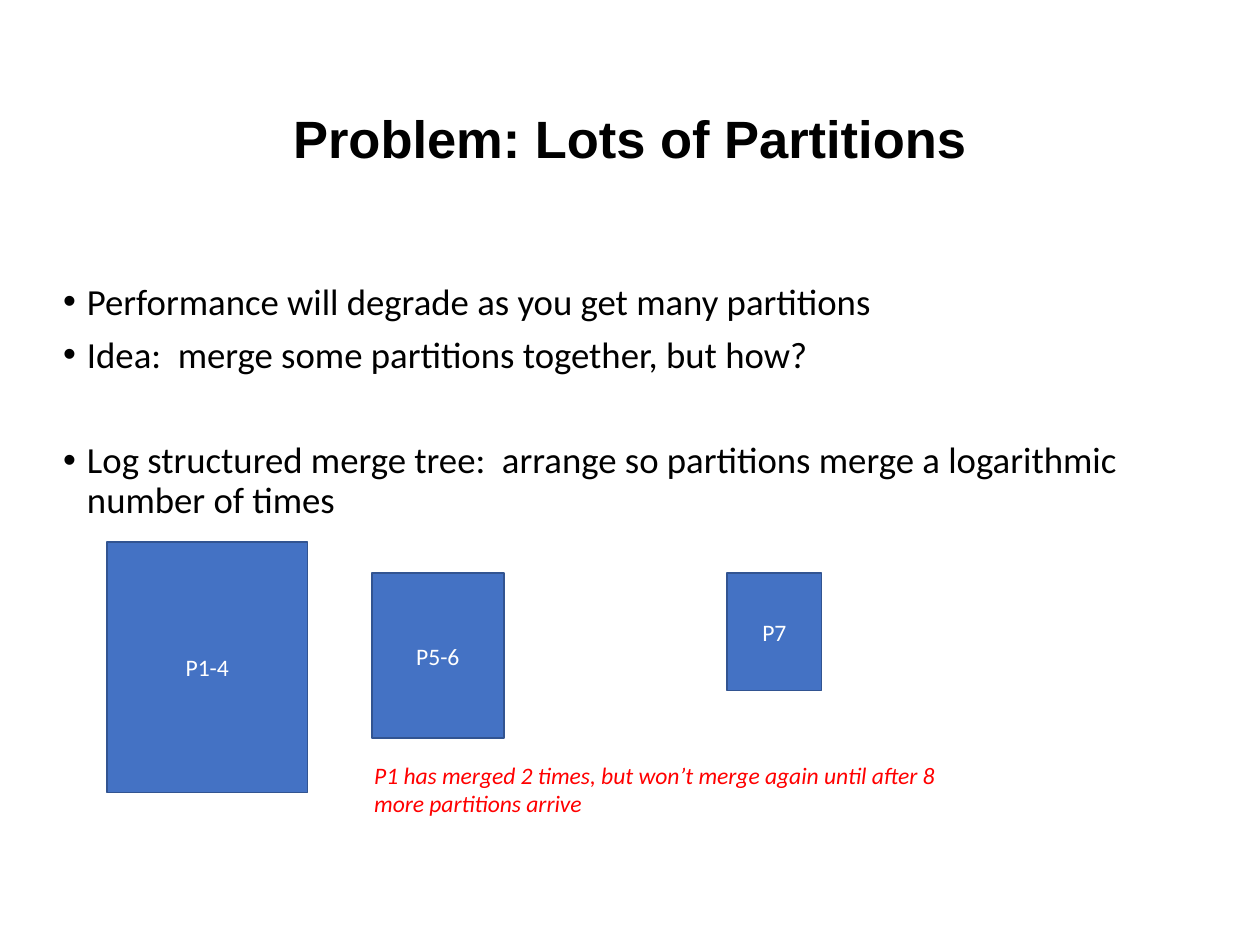
from lxml import etree
from pptx import Presentation
from pptx import util as u
from pptx.dml.color import RGBColor
from pptx.enum import shapes, text
from pptx.oxml.ns import qn

TITLE = dict(size=u.Pt(30), name="Arial", bold=True)
BODY = dict(size=u.Pt(21), name="Calibri")
LABEL = dict(size=u.Pt(13.5), name="Calibri")
NOTE = dict(LABEL, italic=True)
FRAME = dict(
    word_wrap=True,
    margin_left=u.Inches(0.08),
    margin_right=u.Inches(0.08),
    margin_top=u.Inches(0.04),
    margin_bottom=u.Inches(0.04),
)
LINE, GAP = 22.8, 7.5
POINTS = [
    ("Performance will degrade as you get many partitions", 0),
    ("Idea:  merge some partitions together, but how?", GAP),
    ("Log structured merge tree:  arrange so partitions merge "
     "a logarithmic number of times", LINE + 2 * GAP),
]
PARTS = [
    ("P1-4", (0.85, 4.3, 1.59, 1.99)),
    ("P5-6", (2.95, 4.55, 1.05, 1.31)),
    ("P7", (5.77, 4.55, 0.75, 0.93)),
]


def paint(part, color):
    """Give a font, fill or line a solid hex colour."""
    if hasattr(part, "solid"):
        part.solid()
        part = part.fore_color
    elif hasattr(part, "color"):
        part = part.color
    part.rgb = RGBColor.from_string(color)


def style(item, values):
    """Set each attribute in a dict of format values."""
    for key, value in values.items():
        setattr(item, key, value)


def write(para, words, font, color, **form):
    """Put one formatted run in a paragraph."""
    style(para, form)
    run = para.add_run()
    run.text = words
    style(run.font, font)
    paint(run.font, color)


def frame(slide, box, **form):
    """Add a text box and return its text frame."""
    area = slide.shapes.add_textbox(*map(u.Inches, box)).text_frame
    style(area, dict(FRAME, **form))
    return area


def title(slide, box):
    """Place the slide title."""
    area = frame(slide, box, vertical_anchor=text.MSO_ANCHOR.MIDDLE)
    write(area.paragraphs[0], "Problem: Lots of Partitions", TITLE, "000000",
          alignment=text.PP_ALIGN.CENTER, line_spacing=0.9)


def bullet(para):
    """Give a paragraph a hanging bullet."""
    props = para._p.get_or_add_pPr()
    props.set("marL", str(u.Inches(0.19)))
    props.set("indent", str(-u.Inches(0.19)))
    etree.SubElement(props, qn("a:buFont")).set("typeface", "Arial")
    etree.SubElement(props, qn("a:buChar")).set("char", "•")


def body(slide, box):
    """Place the list of points."""
    area = frame(slide, box)
    for i, (words, gap) in enumerate(POINTS):
        para = area.add_paragraph() if i else area.paragraphs[0]
        bullet(para)
        write(para, words, BODY, "000000",
              line_spacing=0.9, space_before=u.Pt(gap))


def block(slide, box, words):
    """Place one labelled partition."""
    rect = slide.shapes.add_shape(
        shapes.MSO_SHAPE.RECTANGLE, *map(u.Inches, box))
    rect.shadow.inherit = False
    paint(rect.fill, "4472C4")
    paint(rect.line, "325491")
    rect.line.width = u.Pt(1)
    area = rect.text_frame
    style(area, dict(FRAME, vertical_anchor=text.MSO_ANCHOR.MIDDLE))
    write(area.paragraphs[0], words, LABEL, "FFFFFF",
          alignment=text.PP_ALIGN.CENTER)


def note(slide, box):
    """Place the remark under the partitions."""
    area = frame(slide, box, auto_size=text.MSO_AUTO_SIZE.SHAPE_TO_FIT_TEXT)
    write(area.paragraphs[0],
          "P1 has merged 2 times, but won’t merge again until after 8 "
          "more partitions arrive", NOTE, "FF0000")


def main():
    """Build and save the slide."""
    deck = Presentation()
    deck.slide_width, deck.slide_height = u.Inches(10), u.Inches(7.5)
    slide = deck.slides.add_slide(deck.slide_layouts[6])
    title(slide, (0.69, 0.4, 8.62, 1.45))
    body(slide, (0.42, 2.21, 8.62, 3.57))
    for words, box in PARTS:
        block(slide, box, words)
    note(slide, (2.89, 6, 5, 0.56))
    deck.save("out.pptx")


if __name__ == "__main__":
    main()
